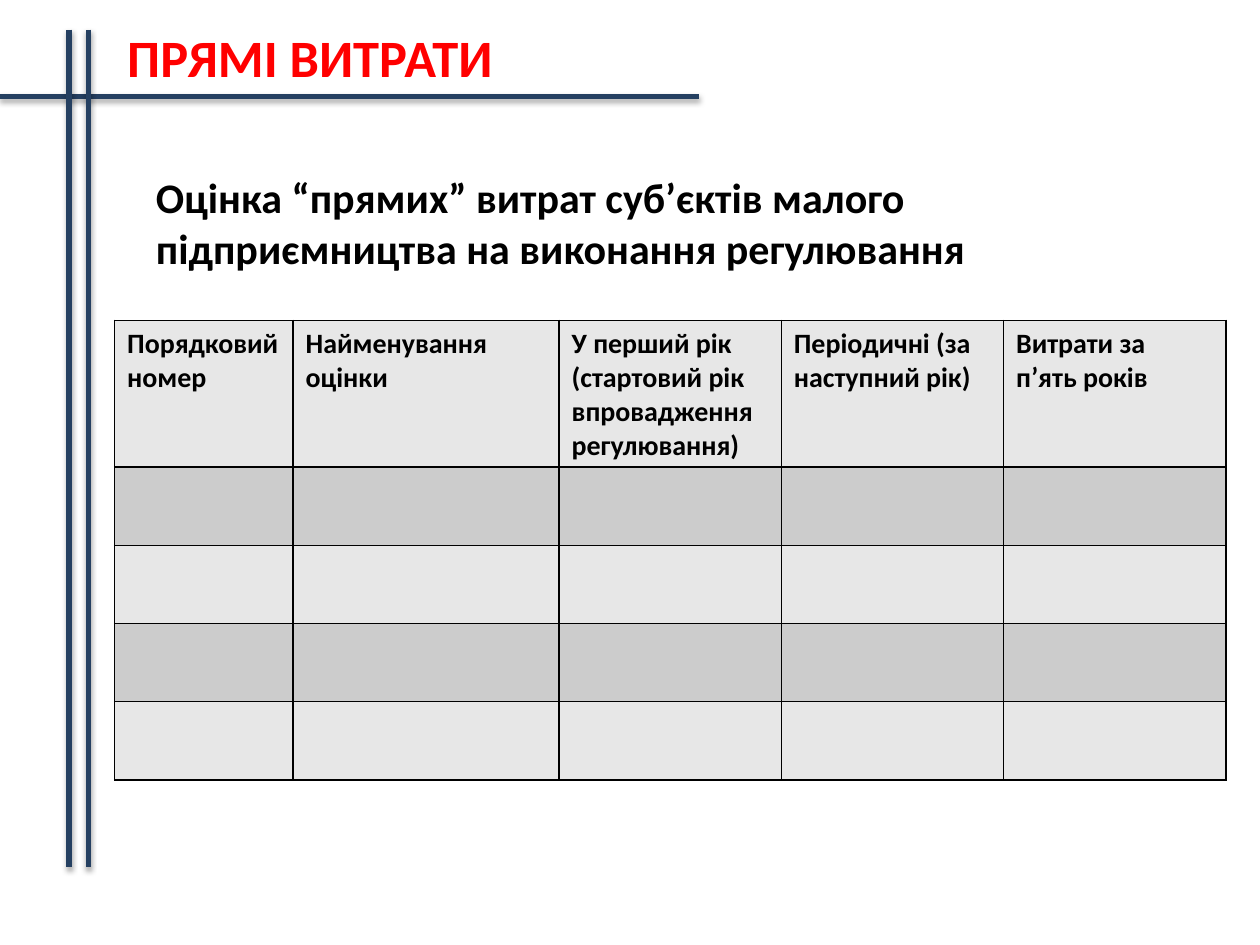
import pptx
import pptx.util
import pptx.dml.color
import pptx.enum.shapes
import pptx.enum.text
import pptx.oxml
import pptx.oxml.ns
from dataclasses import dataclass

Pt = pptx.util.Pt
RGBColor = pptx.dml.color.RGBColor


@dataclass(frozen=True)
class Theme:
    font: str = "Calibri"
    title_color: str = "FF0000"
    text_color: str = "000000"
    rule_color: str = "254061"
    border_color: str = "000000"
    bands: tuple = ("E7E7E7", "CCCCCC")
    title_size: int = 30
    subtitle_size: int = 24
    table_size: int = 16
    rule_width: int = 3
    border_width: int = 1


THEME = Theme()
HEADERS = [
    "Порядковий номер",
    "Найменування оцінки",
    "У перший рік (стартовий рік впровадження регулювання)",
    "Періодичні (за наступний рік)",
    "Витрати за\vп’ять років",
]
COLUMN_WIDTHS = [102, 152, 127, 127, 127]
ROW_HEIGHTS = [84] + [44.65] * 4


def set_attributes(target, values):
    for name, value in values.items():
        setattr(target, name, value)


def write_text(text_frame, text, size, color):
    paragraph = text_frame.paragraphs[0]
    paragraph.text = text
    paragraph.alignment = pptx.enum.text.PP_ALIGN.LEFT
    for run in paragraph.runs:
        set_attributes(run.font, {"name": THEME.font, "size": Pt(size), "bold": True})
        run.font.color.rgb = RGBColor.from_string(color)


def add_rule(slide, start, end):
    rule = slide.shapes.add_connector(
        pptx.enum.shapes.MSO_CONNECTOR.STRAIGHT, *map(Pt, start + end))
    rule.line.color.rgb = RGBColor.from_string(THEME.rule_color)
    rule.line.width = Pt(THEME.rule_width)
    rule._element.spPr.append(pptx.oxml.parse_xml(
        f'<a:effectLst {pptx.oxml.ns.nsdecls("a")}>'
        f'<a:outerShdw blurRad="{Pt(3.1)}" dist="{Pt(1.8)}" dir="5400000" rotWithShape="0">'
        '<a:srgbClr val="000000"><a:alpha val="35000"/></a:srgbClr>'
        '</a:outerShdw></a:effectLst>'))


def add_frame_rules(slide, left, top, width, height):
    crossing = top + 38
    add_rule(slide, (left, crossing), (left + width, crossing))
    for offset in (39.5, 50.5):
        add_rule(slide, (left + offset, top), (left + offset, top + height))


def format_text_box(shape, left, top, width, height):
    set_attributes(shape, {"left": Pt(left), "top": Pt(top),
                           "width": Pt(width), "height": Pt(height)})
    set_attributes(shape.text_frame, {
        "word_wrap": True,
        "auto_size": pptx.enum.text.MSO_AUTO_SIZE.SHAPE_TO_FIT_TEXT,
        "vertical_anchor": pptx.enum.text.MSO_ANCHOR.TOP,
    })


def place_title(slide, left, top, width, height):
    title = slide.shapes.title
    format_text_box(title, left, top, width, height)
    write_text(title.text_frame, "ПРЯМІ ВИТРАТИ", THEME.title_size, THEME.title_color)


def add_subtitle(slide, left, top, width, height):
    subtitle = slide.shapes.add_textbox(0, 0, 0, 0)
    format_text_box(subtitle, left, top, width, height)
    write_text(
        subtitle.text_frame,
        "Оцінка “прямих” витрат суб’єктів малого підприємництва на виконання регулювання",
        THEME.subtitle_size, THEME.text_color)


def add_borders(cell):
    properties = cell._tc.get_or_add_tcPr()
    for side in ("lnL", "lnR", "lnT", "lnB"):
        properties.append(pptx.oxml.parse_xml(
            f'<a:{side} {pptx.oxml.ns.nsdecls("a")} w="{Pt(THEME.border_width)}">'
            f'<a:solidFill><a:srgbClr val="{THEME.border_color}"/></a:solidFill>'
            f'</a:{side}>'))


def add_cost_table(slide, left, top):
    table = slide.shapes.add_table(
        len(ROW_HEIGHTS), len(COLUMN_WIDTHS), Pt(left), Pt(top),
        Pt(sum(COLUMN_WIDTHS)), Pt(sum(ROW_HEIGHTS))).table
    for column, width in zip(table.columns, COLUMN_WIDTHS):
        column.width = Pt(width)
    for index, (row, height) in enumerate(zip(table.rows, ROW_HEIGHTS)):
        row.height = Pt(height)
        for cell in row.cells:
            add_borders(cell)
            cell.fill.solid()
            cell.fill.fore_color.rgb = RGBColor.from_string(THEME.bands[index % 2])
    for cell, header in zip(table.rows[0].cells, HEADERS):
        write_text(cell.text_frame, header, THEME.table_size, THEME.text_color)


def build_cost_slide(presentation):
    slide = presentation.slides.add_slide(presentation.slide_layouts[5])
    add_frame_rules(slide, 0, 17, 399.5, 478.5)
    place_title(slide, 65.5, 10.8, 466.5, 44)
    add_subtitle(slide, 82, 94.5, 595.5, 65.5)
    add_cost_table(slide, 65.5, 183)


def main():
    presentation = pptx.Presentation()
    set_attributes(presentation, {"slide_width": Pt(720), "slide_height": Pt(540)})
    build_cost_slide(presentation)
    presentation.save("out.pptx")


if __name__ == "__main__":
    main()
